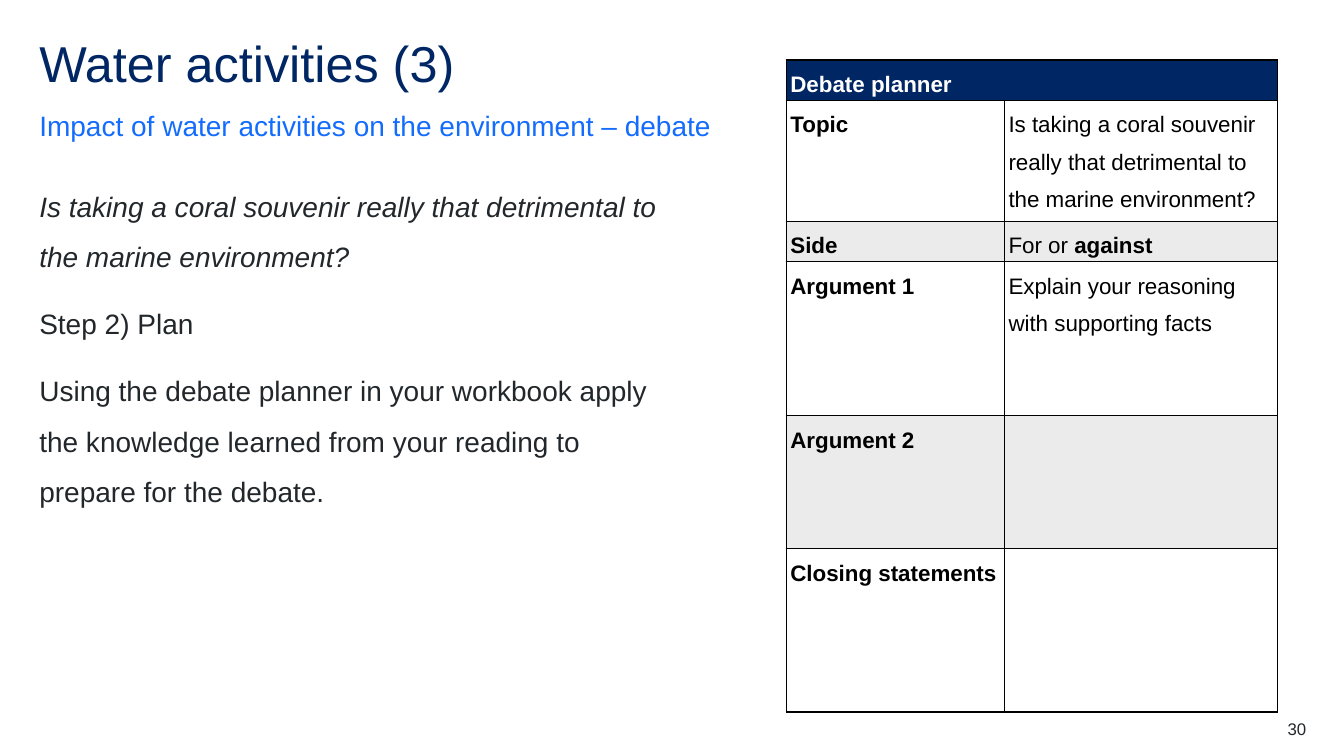
import pptx
import pptx.util
import pptx.dml.color
import pptx.enum.text
import pptx.oxml
import pptx.oxml.ns

Pt = pptx.util.Pt
ALIGN = pptx.enum.text.PP_ALIGN
ANCHOR = pptx.enum.text.MSO_ANCHOR

NAVY = "002664"
BLUE = "146CFD"
INK = "22272B"
BLACK = "000000"
WHITE = "FFFFFF"
GREY = "EBEBEB"

HEIGHTS = [26.6, 80, 26.6, 110.2, 95, 116.6]
WIDTHS = [155.8, 195.2]
ROWS = [
    ("Topic", [("Is taking a coral souvenir really that detrimental to the marine environment?", False)]),
    ("Side", [("For or ", False), ("against", True)]),
    ("Argument 1", [("Explain your reasoning with supporting facts", False)]),
    ("Argument 2", []),
    ("Closing statements", []),
]


def color(code):
    return pptx.dml.color.RGBColor.from_string(code)


def write(para, text, size=20, ink=INK, bold=False, slant=False,
          line=1.5, after=12, align=ALIGN.LEFT):
    para.line_spacing = line
    para.space_before = Pt(0)
    para.space_after = Pt(after)
    para.alignment = align
    run = para.add_run()
    run.text = text
    font = run.font
    font.name = "Arial"
    font.size = Pt(size)
    font.bold = bold
    font.italic = slant
    font.color.rgb = color(ink)


def add_box(slide, left, top, width, height, anchor=ANCHOR.TOP):
    box = slide.shapes.add_textbox(Pt(left), Pt(top), Pt(width), Pt(height))
    frame = box.text_frame
    frame.word_wrap = True
    frame.vertical_anchor = anchor
    frame.margin_left = frame.margin_right = 0
    frame.margin_top = frame.margin_bottom = 0
    return frame


def add_edges(cell):
    props = cell._tc.get_or_add_tcPr()
    space = pptx.oxml.ns.nsdecls("a")
    for spot, side in enumerate("LRTB"):
        edge = pptx.oxml.parse_xml(
            f'<a:ln{side} {space} w="{Pt(1)}"><a:solidFill>'
            f'<a:srgbClr val="{BLACK}"/></a:solidFill></a:ln{side}>')
        props.insert(spot, edge)


def style_cell(cell, fill):
    cell.fill.solid()
    cell.fill.fore_color.rgb = color(fill)
    cell.margin_left = cell.margin_right = Pt(3)
    cell.margin_top = cell.margin_bottom = 0
    add_edges(cell)


def fill_cell(cell, runs, ink=BLACK):
    for text, bold in runs:
        write(cell.text_frame.paragraphs[0], text, size=16, ink=ink,
              bold=bold, after=6)


def add_plan(slide):
    frame = slide.shapes.add_table(
        len(HEIGHTS), len(WIDTHS), Pt(561.6), Pt(42.8),
        Pt(sum(WIDTHS)), Pt(sum(HEIGHTS)))
    table = frame.table
    for col, width in zip(table.columns, WIDTHS):
        col.width = Pt(width)
    for row, height in zip(table.rows, HEIGHTS):
        row.height = Pt(height)
    head = table.cell(0, 0)
    head.merge(table.cell(0, 1))
    for cell in table.rows[0].cells:
        style_cell(cell, NAVY)
    fill_cell(head, [("Debate planner", True)], WHITE)
    for index, (label, runs) in enumerate(ROWS, 1):
        for cell, parts in zip(table.rows[index].cells, ([(label, True)], runs)):
            style_cell(cell, WHITE if index % 2 else GREY)
            fill_cell(cell, parts)


def main():
    deck = pptx.Presentation()
    deck.slide_width = Pt(960)
    deck.slide_height = Pt(540)
    slide = deck.slides.add_slide(deck.slide_layouts[6])

    title = add_box(slide, 28.1, 28.1, 904.3, 43.2)
    write(title.paragraphs[0], "Water activities (3)", size=36, ink=NAVY,
          line=0.9, after=0)
    lead = add_box(slide, 28.1, 77, 904.3, 24.5, ANCHOR.BOTTOM)
    write(lead.paragraphs[0],
          "Impact of water activities on the environment – debate", ink=BLUE)

    body = add_box(slide, 28.1, 123.1, 451.4, 379.4)
    write(body.paragraphs[0],
          "Is taking a coral souvenir really that detrimental to the marine environment?",
          slant=True)
    write(body.add_paragraph(), "Step 2) Plan")
    write(body.add_paragraph(),
          "Using the debate planner in your workbook apply the knowledge "
          "learned from your reading to prepare for the debate.")

    add_plan(slide)
    page = add_box(slide, 876.2, 513.4, 56.9, 14.4)
    write(page.paragraphs[0], "30", size=12, line=1, after=0, align=ALIGN.RIGHT)
    deck.save("out.pptx")


if __name__ == "__main__":
    main()
